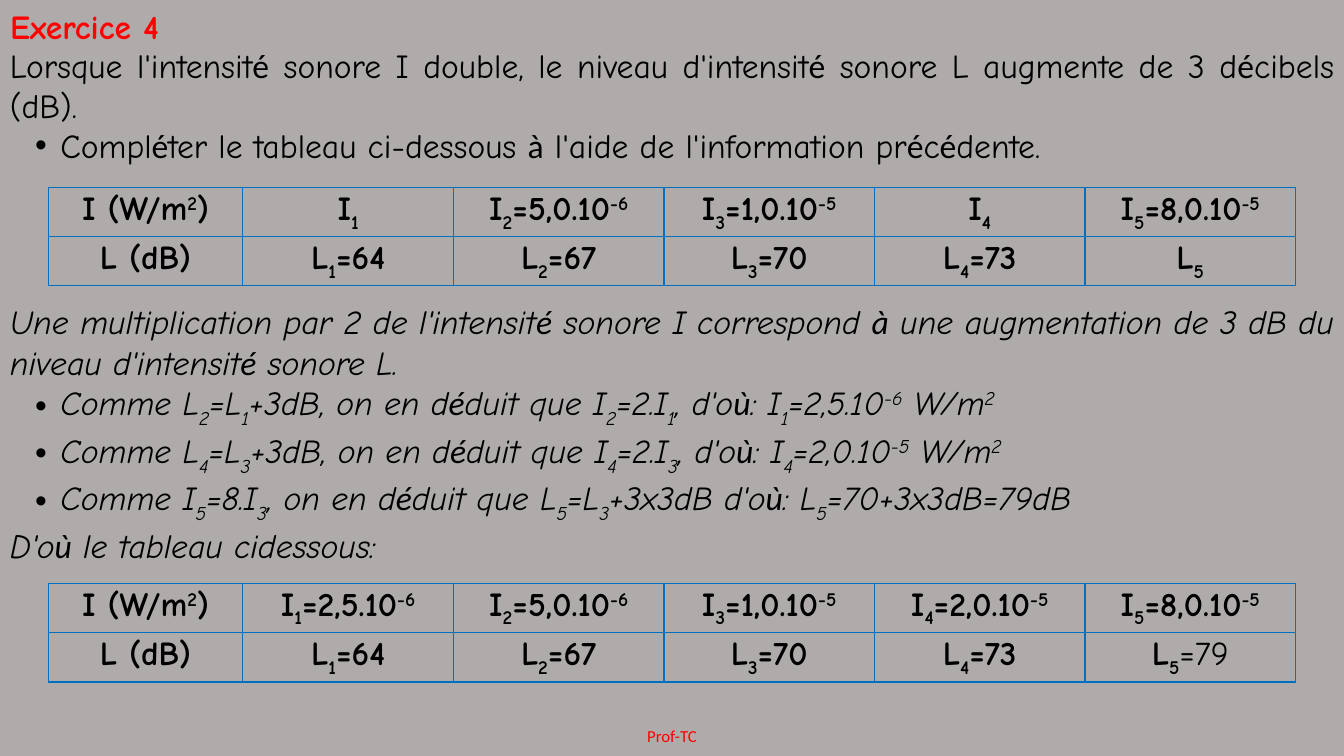
from itertools import groupby

from lxml import etree
from pptx import Presentation
from pptx import util as u
from pptx.dml import color
from pptx.enum import text
from pptx.oxml import ns

BLACK, RED, BLUE, GREY = "000000", "FF0000", "0070C0", "AFABAB"
ACCENTS = "éàù"
ALIGN, ANCHOR = text.PP_ALIGN, text.MSO_ANCHOR


def rgb(value):
    return color.RGBColor.from_string(value)


def add_xml(parent, tag, **attributes):
    return etree.SubElement(parent, ns.qn(tag), attributes)


class ExerciseSlide:
    font, accent_font, size = "Comic Neue", "Calibri", 24

    def __init__(self, deck):
        self.slide = deck.slides.add_slide(deck.slide_layouts[5])
        fill = self.slide.background.fill
        fill.solid()
        fill.fore_color.rgb = rgb(GREY)

    def place(self, shape, left, top, width, height):
        shape.left, shape.top = u.Pt(left), u.Pt(top)
        shape.width, shape.height = u.Pt(width), u.Pt(height)

    def style(self, span, font, size, hue, bold=False, italic=False):
        span.font.name, span.font.size = font, u.Pt(size)
        span.font.color.rgb = rgb(hue)
        span.font.bold, span.font.italic = bold, italic

    def formula(self, para, content, lowered, bold=False, italic=False):
        baselines = {"_": lowered, "^": 30}
        for piece in content.split("~"):
            mark = piece[0] if piece[0] in "_^!" else ""
            for accented, letters in groupby(piece[len(mark):], lambda c: c in ACCENTS):
                span = para.add_run()
                span.text = "".join(letters)
                font = self.accent_font if accented else self.font
                self.style(span, font, self.size, BLACK, bold and mark != "!", italic)
                if mark in baselines:
                    span._r.get_or_add_rPr().set("baseline", str(baselines[mark] * 1000))

    def bullet(self, para):
        para.level = 1
        properties = para._p.get_or_add_pPr()
        properties.set("marL", str(u.Pt(36)))
        properties.set("indent", str(u.Pt(-18)))
        add_xml(properties, "a:buFont", typeface="Arial")
        add_xml(properties, "a:buChar", char="•")

    def title(self, content, *area):
        shape = self.slide.shapes.title
        self.place(shape, *area)
        frame = shape.text_frame
        frame.text = content
        frame.vertical_anchor = ANCHOR.TOP
        frame.auto_size = text.MSO_AUTO_SIZE.NONE
        para = frame.paragraphs[0]
        para.alignment, para.line_spacing = ALIGN.LEFT, 1.0
        para.space_before = u.Pt(0)
        self.style(para.runs[0], self.font, self.size, RED, bold=True)

    def box(self, *area):
        frame = self.slide.shapes.add_textbox(*map(u.Pt, area)).text_frame
        frame.word_wrap = True
        return frame

    def footer(self, content, *area):
        frame = self.box(*area)
        frame.text = content
        frame.vertical_anchor = ANCHOR.MIDDLE
        para = frame.paragraphs[0]
        para.alignment = ALIGN.CENTER
        self.style(para.runs[0], self.accent_font, 12, RED)

    def body(self, lines, *area, italic=False):
        frame = self.box(*area)
        for index, line in enumerate(lines):
            para = frame.add_paragraph() if index else frame.paragraphs[0]
            para.alignment = ALIGN.JUSTIFY
            if line.startswith("•"):
                self.bullet(para)
            self.formula(para, line.lstrip("•"), -30, italic=italic)

    def cell(self, cell, content):
        cell.margin_left = cell.margin_right = u.Pt(5)
        cell.margin_top = cell.margin_bottom = 0
        para = cell.text_frame.paragraphs[0]
        para.alignment, para.line_spacing = ALIGN.CENTER, 1.07
        para.space_after = u.Pt(8)
        self.formula(para, content, -25, bold=True)
        properties = cell._tc.get_or_add_tcPr()
        for side in "LRTB":
            line = add_xml(properties, f"a:ln{side}", w=str(u.Pt(1)))
            add_xml(add_xml(line, "a:solidFill"), "a:srgbClr", val=BLUE)
        cell.fill.background()

    def table(self, rows, left, top, row_height):
        widths = [139] + [150.4] * (len(rows[0]) - 1)
        area = (left, top, sum(widths), row_height * len(rows))
        table = self.slide.shapes.add_table(len(rows), len(widths), *map(u.Pt, area)).table
        table.first_row = table.horz_banding = False
        for column, width in zip(table.columns, widths):
            column.width = u.Pt(width)
        for row, contents in zip(table.rows, rows):
            row.height = u.Pt(row_height)
            for cell, content in zip(row.cells, contents):
                self.cell(cell, content)


def main():
    deck = Presentation()
    deck.slide_width, deck.slide_height = u.Pt(960), u.Pt(540)
    page = ExerciseSlide(deck)

    intensity_label, level_label = "I (W/m~^2~)", "L (dB)"
    intensities = ["I~_1~=2,5.10~^-6", "I~_2~=5,0.10~^-6", "I~_3~=1,0.10~^-5",
                   "I~_4~=2,0.10~^-5", "I~_5~=8,0.10~^-5"]
    levels = ["L~_1~=64", "L~_2~=67", "L~_3~=70", "L~_4~=73"]
    given = ["I~_1", *intensities[1:3], "I~_4", intensities[4]]

    page.title("Exercice 4", 0, 0.7, 960, 35)
    page.body([
        "Lorsque l'intensité sonore I double, le niveau d'intensité sonore L "
        "augmente de 3 décibels (dB).",
        "•Compléter le tableau ci-dessous à l'aide de l'information précédente.",
    ], 0, 28.3, 960, 94)
    page.table([[intensity_label, *given], [level_label, *levels, "L~_5"]],
               34.5, 133.9, 33.2)
    page.body([
        "Une multiplication par 2 de l'intensité sonore I correspond à une "
        "augmentation de 3 dB du niveau d'intensité sonore L.",
        "•Comme L~_2~=L~_1~+3dB, on en déduit que I~_2~=2.I~_1~, d'où: "
        "I~_1~=2,5.10~^-6~ W/m~^2",
        "•Comme L~_4~=L~_3~+3dB, on en déduit que I~_4~=2.I~_3~, d'où: "
        "I~_4~=2,0.10~^-5~ W/m~^2",
        "•Comme I~_5~=8.I~_3~, on en déduit que L~_5~=L~_3~+3x3dB d'où: "
        "L~_5~=70+3x3dB=79dB",
        "D'où le tableau cidessous:",
    ], 0, 211.7, 960, 181.4, italic=True)
    page.table([[intensity_label, *intensities], [level_label, *levels, "L~_5~!=79"]],
               34.5, 416.6, 35.3)
    page.footer("Prof-TC", 0, 511.2, 960, 28.8)

    deck.save("out.pptx")


if __name__ == "__main__":
    main()
